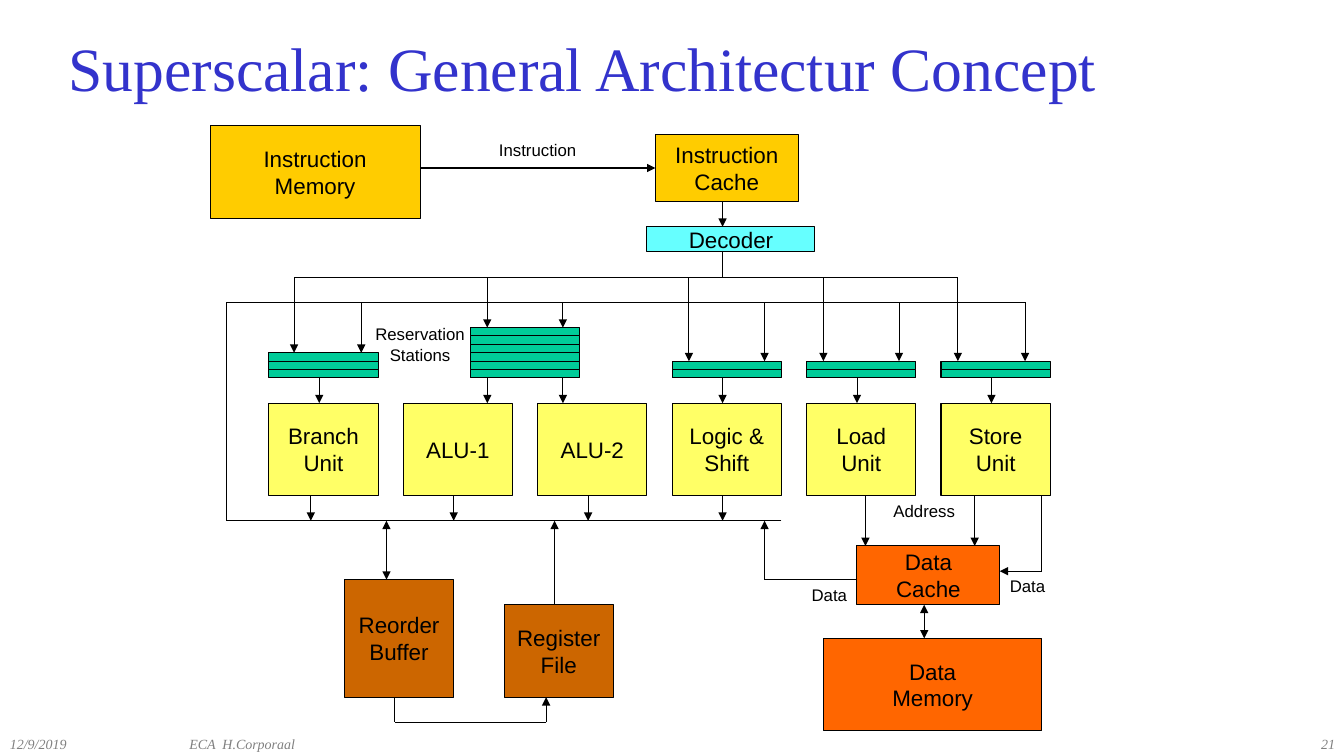
from itertools import pairwise

from lxml import etree
from pptx import Presentation
from pptx.dml.color import RGBColor
from pptx.enum.shapes import MSO_CONNECTOR, MSO_SHAPE
from pptx.enum.text import MSO_ANCHOR, MSO_AUTO_SIZE, PP_ALIGN
from pptx.oxml.ns import qn
from pptx.util import Inches, Pt

RECTANGLE = MSO_SHAPE.RECTANGLE
STRAIGHT = MSO_CONNECTOR.STRAIGHT
MIDDLE = MSO_ANCHOR.MIDDLE
NO_AUTOFIT = MSO_AUTO_SIZE.NONE
LEFT, CENTER, RIGHT = PP_ALIGN.LEFT, PP_ALIGN.CENTER, PP_ALIGN.RIGHT

BLACK = RGBColor(0x00, 0x00, 0x00)
GRAY = RGBColor(0x80, 0x80, 0x80)
BLUE = RGBColor(0x33, 0x33, 0xCC)
GOLD = RGBColor(0xFF, 0xCC, 0x00)
CYAN = RGBColor(0x66, 0xFF, 0xFF)
YELLOW = RGBColor(0xFF, 0xFF, 0x66)
GREEN = RGBColor(0x00, 0xCC, 0x99)
BROWN = RGBColor(0xCC, 0x66, 0x00)
ORANGE = RGBColor(0xFF, 0x66, 0x00)

SANS, SERIF = "Arial", "Times New Roman"
LINE_WIDTH = Pt(0.75)

# Rows and columns of the diagram, in twelfths of an inch
DECODE_BUS, RESULT_BUS, COMPLETION_BUS = 33, 36, 62
STATION_BOTTOM, UNIT_TOP, UNIT_BOTTOM = 45, 48, 59
UNIT_LEFT, UNIT_PITCH, UNIT_WIDTH, UNIT_HEIGHT = 32, 16, 13, 11

UNITS = ["Branch\nUnit", "ALU-1", "ALU-2", "Logic &\nShift", "Load\nUnit", "Store\nUnit"]
COMPLETION_COLUMNS = [37, 54, 70, 86]

# left, entries, column from decoder, column from result bus, columns to units
STATIONS = [
    (32, 3, 35, 43, [38]),
    (56, 6, 58, 67, [58, 67]),
    (80, 2, 82, 91, [86]),
    (96, 2, 98, 107, [102]),
    (112, 2, 114, 122, [118]),
]

# text, left, top, width, height, fill
BLOCKS = [
    ("Instruction\nMemory", 25, 15, 25, 11, GOLD),
    ("Instruction\nCache", 78, 16, 17, 8, GOLD),
    ("Decoder", 77, 27, 20, 3, CYAN),
    ("Reorder\nBuffer", 41, 69, UNIT_WIDTH, 14, BROWN),
    ("Register\nFile", 60, 72, UNIT_WIDTH, 11, BROWN),
    ("Data\nCache", 102, 65, 17, 7, ORANGE),
    ("Data\nMemory", 98, 76, 26, 11, ORANGE),
]

# text, left, top, width, height, alignment
LABELS = [
    ("Reservation Stations", 43, 38, 14, 6, CENTER),
    ("Address", 103, 59, 14, 3.6, CENTER),
    ("Data", 119, 68, 14, 3.6, LEFT),
    ("Data", 88, 69, 14, 3.6, RIGHT),
    ("Instruction", 57, 16, 14, 3.6, CENTER),
]
FOOTERS = [
    ("12/9/2019", 0, 87, 21.36, 3, LEFT),
    ("ECA  H.Corporaal", 21.36, 87, 50.64, 3, LEFT),
    ("21", 126.72, 87, 33.36, 3, RIGHT),
]

PLAIN_WIRES = [
    [(93, COMPLETION_BUS), (27, COMPLETION_BUS), (27, RESULT_BUS), (122, RESULT_BUS)],
    [(35, DECODE_BUS), (114, DECODE_BUS)],
    [(86, 30), (86, DECODE_BUS)],
]
ARROWS = [
    [(50, 20), (78, 20)],
    [(86, 24), (86, 27)],
    [(103, UNIT_BOTTOM), (103, 65)],
    [(116, UNIT_BOTTOM), (116, 65)],
    [(124, UNIT_BOTTOM), (124, 68), (119, 68)],
    [(66, 72), (66, COMPLETION_BUS)],
    [(47, 83), (47, 86), (65, 86), (65, 83)],
    [(102, 69), (91, 69), (91, COMPLETION_BUS)],
]
DOUBLE_ARROWS = [
    [(46, 69), (46, COMPLETION_BUS)],
    [(110, 72), (110, 76)],
]


def grid(*steps):
    """Turn twelfths of an inch into lengths."""
    return [Inches(step / 12) for step in steps]


def format_text(frame, size, font, color, align, italic=False):
    for para in frame.paragraphs:
        para.alignment = align
        for span in para.runs:
            span.font.size = Pt(size)
            span.font.name = font
            span.font.color.rgb = color
            span.font.italic = italic


def add_title(page, text):
    title = page.shapes.title
    title.left, title.top = Inches(0.58), Inches(0.25)
    title.width, title.height = Inches(12.44), Inches(0.83)
    frame = title.text_frame
    frame.text = text
    frame.auto_size = NO_AUTOFIT
    frame.vertical_anchor = MIDDLE
    format_text(frame, 44, SERIF, BLUE, LEFT)


def add_block(page, text, left, top, width, height, fill):
    block = page.shapes.add_shape(RECTANGLE, *grid(left, top, width, height))
    block.shadow.inherit = False
    block.fill.solid()
    block.fill.fore_color.rgb = fill
    block.line.color.rgb = BLACK
    block.line.width = LINE_WIDTH
    if text:
        frame = block.text_frame
        frame.text = text
        frame.word_wrap = False
        frame.vertical_anchor = MIDDLE
        format_text(frame, 16, SANS, BLACK, CENTER)


def add_label(page, text, left, top, width, height, align,
              size=12, font=SANS, color=BLACK, italic=False):
    box = page.shapes.add_textbox(*grid(left, top, width, height))
    frame = box.text_frame
    frame.text = text
    frame.word_wrap = True
    format_text(frame, size, font, color, align, italic)


def add_wire(page, points, start_arrow=False, end_arrow=False):
    """Draw straight segments through the points, with arrowheads at the ends."""
    segments = list(pairwise(points))
    for index, (start, end) in enumerate(segments):
        line = page.shapes.add_connector(STRAIGHT, *grid(*start, *end))
        line.line.color.rgb = BLACK
        line.line.width = LINE_WIDTH
        outline = line.line._get_or_add_ln()
        if start_arrow and index == 0:
            etree.SubElement(outline, qn("a:headEnd"), type="triangle")
        if end_arrow and index == len(segments) - 1:
            etree.SubElement(outline, qn("a:tailEnd"), type="triangle")
        etree.SubElement(line._element.spPr, qn("a:effectLst"))


def add_station(page, left, entries, decode_x, result_x, unit_columns):
    """Stack the entries upwards and wire them to the buses and units."""
    for entry in range(1, entries + 1):
        add_block(page, "", left, STATION_BOTTOM - entry, UNIT_WIDTH, 1, GREEN)
    top = STATION_BOTTOM - entries
    add_wire(page, [(decode_x, DECODE_BUS), (decode_x, top)], end_arrow=True)
    add_wire(page, [(result_x, RESULT_BUS), (result_x, top)], end_arrow=True)
    for x in unit_columns:
        add_wire(page, [(x, STATION_BOTTOM), (x, UNIT_TOP)], end_arrow=True)


def main():
    deck = Presentation()
    deck.slide_width, deck.slide_height = Inches(13.33), Inches(7.5)
    page = deck.slides.add_slide(deck.slide_layouts.get_by_name("Title Only"))
    add_title(page, "Superscalar: General Architectur Concept")
    for footer in FOOTERS:
        add_label(page, *footer, size=10, font=SERIF, color=GRAY, italic=True)
    for block in BLOCKS:
        add_block(page, *block)
    for index, unit in enumerate(UNITS):
        left = UNIT_LEFT + index * UNIT_PITCH
        add_block(page, unit, left, UNIT_TOP, UNIT_WIDTH, UNIT_HEIGHT, YELLOW)
    for station in STATIONS:
        add_station(page, *station)
    for x in COMPLETION_COLUMNS:
        add_wire(page, [(x, UNIT_BOTTOM), (x, COMPLETION_BUS)], end_arrow=True)
    for points in PLAIN_WIRES:
        add_wire(page, points)
    for points in ARROWS:
        add_wire(page, points, end_arrow=True)
    for points in DOUBLE_ARROWS:
        add_wire(page, points, start_arrow=True, end_arrow=True)
    for label in LABELS:
        add_label(page, *label)
    deck.save("out.pptx")


if __name__ == "__main__":
    main()
